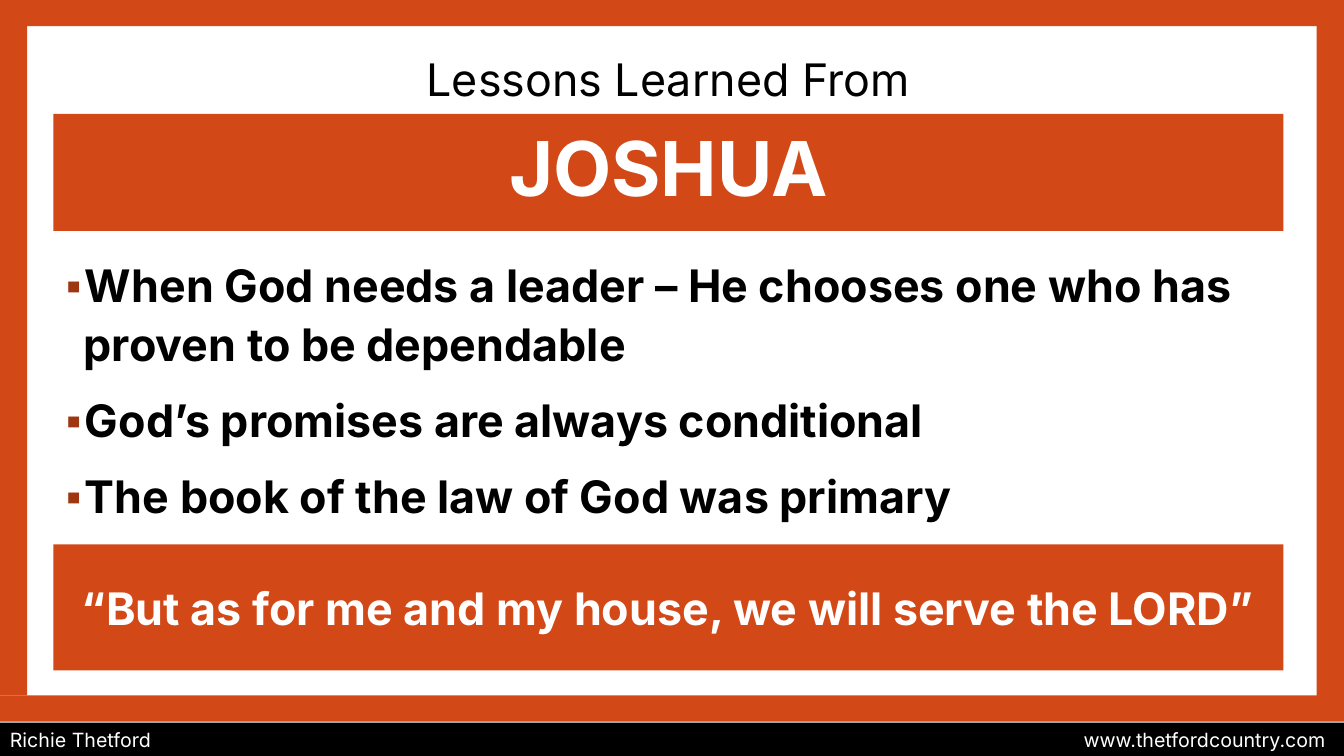
from lxml import etree
from pptx import Presentation
from pptx.dml.color import RGBColor
from pptx.enum.shapes import MSO_SHAPE
from pptx.enum.text import MSO_ANCHOR, MSO_AUTO_SIZE, PP_ALIGN
from pptx.oxml.ns import qn
from pptx.util import Inches, Pt

RECTANGLE = MSO_SHAPE.RECTANGLE
CENTER, LEFT = PP_ALIGN.CENTER, PP_ALIGN.LEFT
MIDDLE, TOP = MSO_ANCHOR.MIDDLE, MSO_ANCHOR.TOP
NO_FIT = MSO_AUTO_SIZE.NONE

ORANGE = RGBColor(0xD3, 0x48, 0x17)
BULLET_RED = RGBColor(0x9E, 0x36, 0x11)
BLACK = RGBColor(0, 0, 0)
WHITE = RGBColor(0xFF, 0xFF, 0xFF)
FONT = "Inter"

# Content
KICKER = "Lessons Learned From"
NAME = "JOSHUA"
LESSONS = [
    "When God needs a leader – He chooses one who has proven to be dependable",
    "God’s promises are always conditional",
    "The book of the law of God was primary",
]
QUOTE = "“But as for me and my house, we will serve the LORD”"
AUTHOR, WEBSITE = "Richie Thetford", "www.thetfordcountry.com"

# Layout in inches
SLIDE_W, SLIDE_H = 13.33, 7.5
FRAME, FRAME_BOTTOM = 0.27, 7.16
SIDE_H = 6.9
MARGIN, CONTENT_W = 0.53, 12.2
FOOTER_TOP = 7.17
FRAME_BARS = [
    (0, 0, SLIDE_W, 0.26),
    (0, FRAME_BOTTOM - 0.26, SLIDE_W, 0.26),
    (0, 0, FRAME, SIDE_H),
    (SLIDE_W - FRAME, 0.19, FRAME, SIDE_H),
]


def place(shape, left, top, width, height):
    shape.left, shape.top = Inches(left), Inches(top)
    shape.width, shape.height = Inches(width), Inches(height)


def style(paragraph, size, color, bold=False, align=CENTER):
    paragraph.alignment = align
    font = paragraph.font
    font.name, font.size, font.bold = FONT, Pt(size), bold
    font.color.rgb = color


def add_bar(box, color):
    bar = slide.shapes.add_shape(RECTANGLE, *map(Inches, box))
    bar.shadow.inherit = False
    bar.fill.solid()
    bar.fill.fore_color.rgb = color
    bar.line.fill.background()
    return bar


def add_bullet(paragraph):
    props = paragraph._p.get_or_add_pPr()
    props.set("marL", str(Inches(0.2)))
    props.set("indent", str(Inches(-0.2)))
    color = etree.SubElement(props, qn("a:buClr"))
    etree.SubElement(color, qn("a:srgbClr"), val=str(BULLET_RED))
    etree.SubElement(props, qn("a:buSzPct"), val="85000")
    etree.SubElement(props, qn("a:buFont"), typeface=FONT)
    etree.SubElement(props, qn("a:buChar"), char="▪")


def add_right_tab(paragraph, position):
    tabs = etree.SubElement(paragraph._p.get_or_add_pPr(), qn("a:tabLst"))
    etree.SubElement(tabs, qn("a:tab"), pos=str(Inches(position)), algn="r")


presentation = Presentation()
presentation.slide_width = Inches(SLIDE_W)
presentation.slide_height = Inches(SLIDE_H)
slide = presentation.slides.add_slide(presentation.slide_layouts[1])

# Title band
title = slide.shapes.title
place(title, MARGIN, 1.13, CONTENT_W, 1.16)
title.fill.solid()
title.fill.fore_color.rgb = ORANGE
title.text_frame.text = NAME
title.text_frame.auto_size = NO_FIT
title.text_frame.vertical_anchor = MIDDLE
title.text_frame.paragraphs[0].line_spacing = 0.9
style(title.text_frame.paragraphs[0], 54, WHITE, bold=True)

# Lessons
lessons = slide.placeholders[1]
place(lessons, MARGIN, 2.45, CONTENT_W, 4.46)
lessons.text_frame.text = "\n".join(LESSONS)
lessons.text_frame.auto_size = NO_FIT
lessons.text_frame.vertical_anchor = TOP
for number, lesson in enumerate(lessons.text_frame.paragraphs):
    add_bullet(lesson)
    lesson.line_spacing = 1.1
    lesson.space_before = Pt(12 if number else 0)
    style(lesson, 32, BLACK, bold=True, align=LEFT)

# Frame
for box in FRAME_BARS:
    add_bar(box, ORANGE)

# Footer: author on the left, website on a right tab
footer = add_bar((0, FOOTER_TOP, SLIDE_W, 0.34), BLACK)
footer.text_frame.text = f"{AUTHOR}\t{WEBSITE}"
footer.text_frame.vertical_anchor = TOP
credit = footer.text_frame.paragraphs[0]
add_right_tab(credit, 13.05)
style(credit, 14, WHITE, align=LEFT)

# Line above the title
kicker = slide.shapes.add_textbox(*map(Inches, (MARGIN, 0.46, CONTENT_W, 0.64)))
kicker.text_frame.word_wrap = True
kicker.text_frame.text = KICKER
style(kicker.text_frame.paragraphs[0], 32, BLACK)

# Quote band
quote = add_bar((MARGIN, 5.4, CONTENT_W, 1.25), ORANGE)
quote.text_frame.text = QUOTE
quote.text_frame.vertical_anchor = MIDDLE
style(quote.text_frame.paragraphs[0], 32, WHITE, bold=True)

presentation.save("out.pptx")
